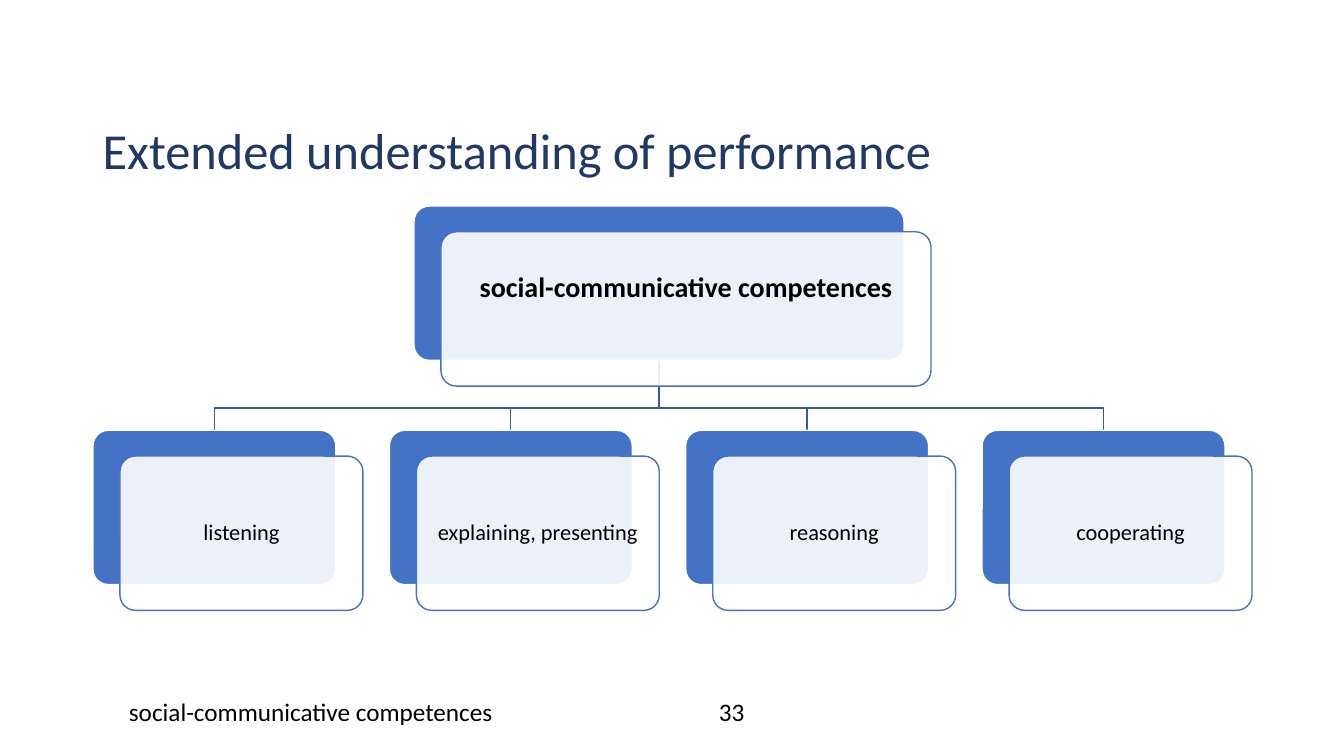
from lxml import etree
from pptx import Presentation
from pptx import util as u
from pptx.dml.color import RGBColor
from pptx.enum import shapes, text
from pptx.oxml.ns import qn

BLACK = RGBColor(0x00, 0x00, 0x00)
WHITE = RGBColor(0xFF, 0xFF, 0xFF)
NAVY = RGBColor(0x20, 0x38, 0x64)
BLUE = RGBColor(0x44, 0x72, 0xC4)
BRANCH_BLUE = RGBColor(0x36, 0x5B, 0x9D)

ROOT = "social-communicative competences"
SKILLS = ["listening", "explaining, presenting", "reasoning", "cooperating"]

CARD_HEIGHT = 110.2
SHIFT_X, SHIFT_Y = 19.3, 18.4
ROOT_TOP, ROOT_WIDTH = 147.2, 350
SKILL_LEFT, SKILL_TOP, SKILL_WIDTH, SKILL_STEP = 66.4, 307.4, 173.5, 211.7
FORK_Y = 291.6


def write(frame, words, size=18, color=BLACK, bold=False, align=text.PP_ALIGN.LEFT,
          anchor=text.MSO_ANCHOR.TOP, spacing=1.0, font="Calibri"):
    frame.word_wrap = True
    frame.vertical_anchor = anchor
    para = frame.paragraphs[0]
    para.alignment = align
    para.line_spacing = spacing
    span = para.add_run()
    span.text = words
    span.font.name = font
    span.font.size = u.Pt(size)
    span.font.bold = bold
    span.font.color.rgb = color


class Diagram:
    def __init__(self, slide, line_width=1, corner=0.1, opacity=90):
        self.slide = slide
        self.line_width = line_width
        self.corner = corner
        self.opacity = opacity

    def label(self, words, left, top, width, height, **style):
        box = self.slide.shapes.add_textbox(
            u.Pt(left), u.Pt(top), u.Pt(width), u.Pt(height))
        write(box.text_frame, words, **style)

    def panel(self, left, top, width, fill, line):
        panel = self.slide.shapes.add_shape(
            shapes.MSO_SHAPE.ROUNDED_RECTANGLE,
            u.Pt(left), u.Pt(top), u.Pt(width), u.Pt(CARD_HEIGHT))
        panel.adjustments[0] = self.corner
        panel.shadow.inherit = False
        panel.fill.solid()
        panel.fill.fore_color.rgb = fill
        panel.line.color.rgb = line
        panel.line.width = u.Pt(self.line_width)
        return panel

    def card(self, words, left, top, width, lift=0, **style):
        """Blue panel under a translucent one; lift raises the words."""
        self.panel(left, top, width, BLUE, WHITE)
        front = self.panel(left + SHIFT_X, top + SHIFT_Y, width, WHITE, BLUE)
        color = front.fill._xPr.find(qn("a:solidFill"))[0]
        etree.SubElement(color, qn("a:alpha"), val=str(self.opacity * 1000))
        frame = front.text_frame
        frame.margin_left = frame.margin_right = u.Pt(8)
        frame.margin_top = u.Pt(8)
        frame.margin_bottom = u.Pt(8 + 2 * lift)
        write(frame, words, align=text.PP_ALIGN.CENTER,
              anchor=text.MSO_ANCHOR.MIDDLE, spacing=0.9, **style)

    def branch(self, start_x, start_y, end_x, end_y):
        builder = self.slide.shapes.build_freeform(u.Pt(start_x), u.Pt(start_y))
        corners = [(start_x, FORK_Y), (end_x, FORK_Y), (end_x, end_y)]
        builder.add_line_segments(
            [(u.Pt(x), u.Pt(y)) for x, y in corners], close=False)
        branch = builder.convert_to_shape()
        branch.shadow.inherit = False
        branch.fill.background()
        branch.line.color.rgb = BRANCH_BLUE
        branch.line.width = u.Pt(self.line_width)


def main():
    deck = Presentation()
    deck.slide_width, deck.slide_height = u.Pt(960), u.Pt(540)
    diagram = Diagram(deck.slides.add_slide(deck.slide_layouts[6]))

    diagram.label("Extended understanding of performance", 66.2, 86.4, 828, 69.8,
                  size=36, color=NAVY, spacing=0.9)
    diagram.label(ROOT, 85, 494, 307.4, 28.8)
    diagram.label("33", 414.7, 494, 216, 28.8, align=text.PP_ALIGN.CENTER)

    lefts = [SKILL_LEFT + i * SKILL_STEP for i in range(len(SKILLS))]
    center = (lefts[0] + lefts[-1] + SKILL_WIDTH) / 2
    for left in reversed(lefts):
        diagram.branch(center, ROOT_TOP + CARD_HEIGHT,
                       left + SKILL_WIDTH / 2, SKILL_TOP)
    diagram.card(ROOT, center - ROOT_WIDTH / 2, ROOT_TOP, ROOT_WIDTH,
                 lift=14.5, size=20, bold=True)
    for skill, left in zip(SKILLS, lefts):
        diagram.card(skill, left, SKILL_TOP, SKILL_WIDTH, size=16)

    deck.save("out.pptx")


if __name__ == "__main__":
    main()
